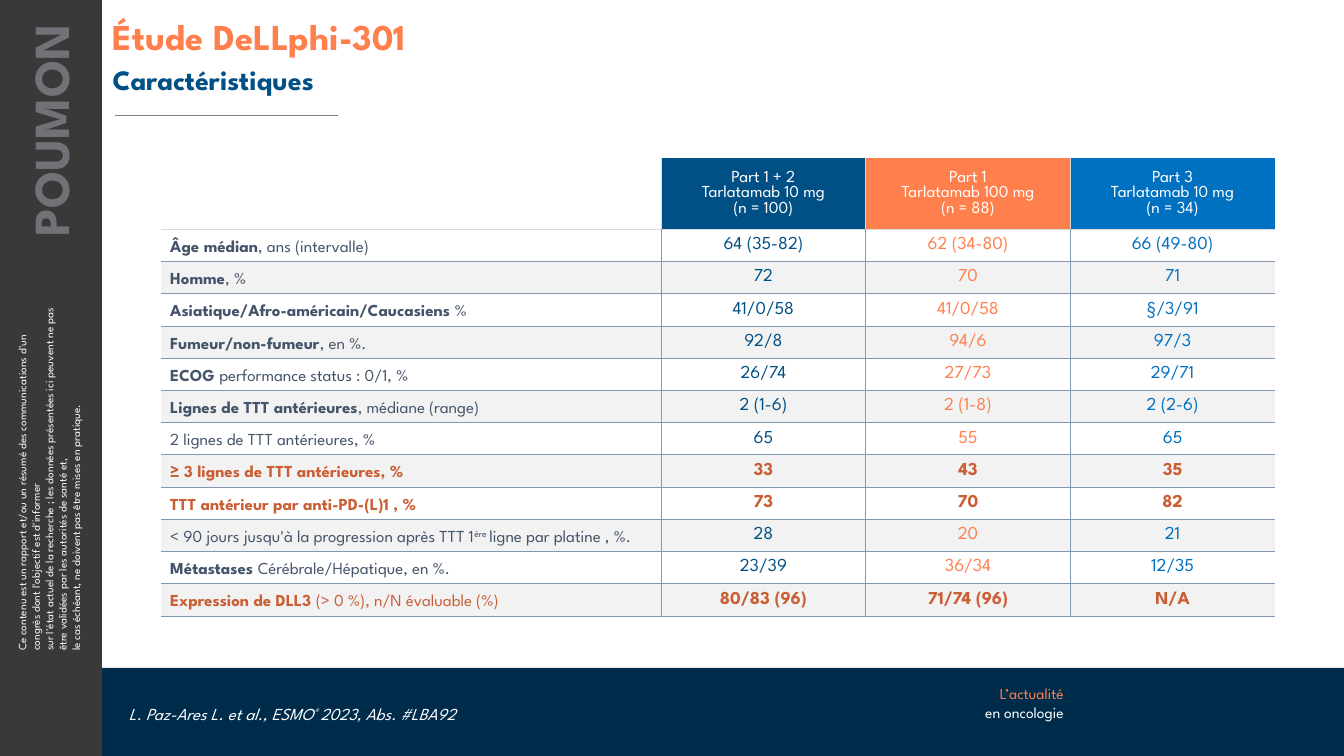
import pptx
import pptx.dml.color
import pptx.enum.shapes
import pptx.enum.text
import pptx.oxml
import pptx.oxml.ns
import pptx.util
from pptx.util import Cm, Pt

FONT = "League Spartan"
NAVY, ORANGE, BLUE = "005086", "FF7F4D", "0070C0"
SLATE, RUST, WHITE = "44546A", "CA5E34", "FFFFFF"
STEEL, PALE = "8497B0", "D9D9D9"
ALIGN = pptx.enum.text.PP_ALIGN
ANCHOR = pptx.enum.text.MSO_ANCHOR
GROUPS = [
    ("Part 1 + 2\nTarlatamab 10 mg\n(n = 100)", NAVY),
    ("Part 1\nTarlatamab 100 mg\n(n = 88)", ORANGE),
    ("Part 3\nTarlatamab 10 mg\n(n = 34)", BLUE),
]
BOLD, SUPER = {"bold": True}, {"raised": True}
ROWS = [
    (False, [("Âge médian", BOLD), (", ans (intervalle)", {})], ["64 (35-82)", "62 (34-80)", "66 (49-80)"]),
    (False, [("Homme", BOLD), (", %", {})], ["72", "70", "71"]),
    (False, [("Asiatique/Afro-américain/Caucasiens", BOLD), (" %", {})], ["41/0/58", "41/0/58", "§/3/91"]),
    (False, [("Fumeur/non-fumeur", BOLD), (", en %.", {})], ["92/8", "94/6", "97/3"]),
    (False, [("ECOG ", BOLD), ("performance status : 0/1, %", {})], ["26/74", "27/73", "29/71"]),
    (False, [("Lignes de TTT antérieures", BOLD), (", médiane (range)", {})], ["2 (1-6)", "2 (1-8)", "2 (2-6)"]),
    (False, [("2 lignes de TTT antérieures, %", {})], ["65", "55", "65"]),
    (True, [("≥ 3 lignes de TTT antérieures, %", BOLD)], ["33", "43", "35"]),
    (True, [("TTT antérieur par anti-PD-(L)1 , %", BOLD)], ["73", "70", "82"]),
    (False, [("< 90 jours jusqu'à la progression après TTT 1", {}), ("ère ", SUPER), ("ligne par platine , %.", {})],
     ["28", "20", "21"]),
    (False, [("Métastases ", BOLD), ("Cérébrale/Hépatique, en %.", {})], ["23/39", "36/34", "12/35"]),
    (True, [("Expression de DLL3 ", BOLD), ("(> 0 %), n/N évaluable (%)", {})], ["80/83 (96)", "71/74 (96)", "N/A"]),
]


def colour(value):
    """Turn a hex string into a colour."""
    return pptx.dml.color.RGBColor.from_string(value)


def paint(part, value):
    """Fill a shape or a cell with one colour."""
    part.fill.solid()
    part.fill.fore_color.rgb = colour(value)


def write(para, spans, size, ink, **common):
    """Add formatted spans to a paragraph, turning newlines into line breaks."""
    for text, extra in spans:
        values = {"name": FONT, "size": Pt(size), "bold": False, **common, **extra}
        raised, tint = values.pop("raised", False), values.pop("ink", ink)
        for index, line in enumerate(text.split("\n")):
            if index:
                para.add_line_break()
            if not line:
                continue
            span = para.add_run()
            span.text = line
            for name, value in values.items():
                setattr(span.font, name, value)
            span.font.color.rgb = colour(tint)
            if raised:
                span.font._element.set("baseline", "30000")


def add_text(page, box, spans, size, ink, align=ALIGN.LEFT, anchor=ANCHOR.TOP, turn=0, right=0.25, **common):
    """Place a wrapped text box."""
    label = page.shapes.add_textbox(*map(Cm, box))
    label.rotation = turn
    frame = label.text_frame
    for name, value in {"word_wrap": True, "vertical_anchor": anchor, "margin_right": Cm(right)}.items():
        setattr(frame, name, value)
    frame.paragraphs[0].alignment = align
    write(frame.paragraphs[0], spans, size, ink, **common)


def add_band(page, box, fill):
    """Draw a plain rectangle."""
    band = page.shapes.add_shape(pptx.enum.shapes.MSO_SHAPE.RECTANGLE, *map(Cm, box))
    band.shadow.inherit = False
    paint(band, fill)
    band.line.fill.background()


def add_footer(page, box):
    """Draw the footer with the reference and the series name."""
    left, top, width, height = box
    add_band(page, box, "002C4C")
    series = [("L’actualité\n", {"ink": ORANGE}), ("en oncologie", {})]
    add_text(page, (left + 20.32, top + 0.29, 4.17, 1.19), series, 11, WHITE, ALIGN.RIGHT)
    reference = [("L. Paz-Ares L. et al., ESMO", {}), ("® ", SUPER), ("2023, Abs. #LBA92", {})]
    add_text(page, (left + 0.43, top + 0.09, 19.1, height - 0.09), reference, 12, WHITE,
             anchor=ANCHOR.MIDDLE, italic=True)


def add_sidebar(page, box):
    """Draw the side band with its two turned texts."""
    left, top, width, height = box
    add_band(page, box, "3A3839")
    notice = (
        "Ce contenu est un rapport et/ou un résumé des communications d'un congrès dont l'objectif est d'informer\n"
        "sur l'état actuel de la recherche ; les données présentées ici peuvent ne pas être validées "
        "par les autorités de santé et,\nle cas échéant, ne doivent pas être mises en pratique."
    )
    add_text(page, (left - 3.33, top + 11.1, 9.14, 1.96), [(notice, {})], 8, WHITE, turn=270)
    add_text(page, (left - 2.64, top + 3, 7.8, 1.8), [("POUMON", {})], 36, "737078",
             ALIGN.RIGHT, turn=270, right=0.61, bold=True)


def add_heading(page, box):
    """Place the title, the subtitle and the rule below them."""
    left, top, width, height = box
    title = page.shapes.title
    place = {"left": left, "top": top, "width": width, "height": 1.02}
    for name, value in place.items():
        setattr(title, name, Cm(value))
    frame = title.text_frame
    setup = {"word_wrap": True, "auto_size": pptx.enum.text.MSO_AUTO_SIZE.NONE, "vertical_anchor": ANCHOR.TOP}
    for name, value in setup.items():
        setattr(frame, name, value)
    para = frame.paragraphs[0]
    para.alignment, para.line_spacing = ALIGN.LEFT, 0.9
    write(para, [("Étude DeLLphi-301", BOLD)], 26, ORANGE)
    add_text(page, (left, top + 1.09, width, 1.27), [("Caractéristiques", BOLD)], 20, NAVY)
    level = Cm(top + height)
    rule = page.shapes.add_connector(pptx.enum.shapes.MSO_CONNECTOR.STRAIGHT,
                                     Cm(left + 0.31), level, Cm(left + 5.94), level)
    rule.line.color.rgb = colour("808080")
    rule.line.width = Pt(0.75)
    rule._element.spPr.append(pptx.oxml.parse_xml(f'<a:effectLst {pptx.oxml.ns.nsdecls("a")}/>'))


def set_borders(cell, sides):
    """Give a cell its edges, from side to colour and width."""
    props = cell._tc.get_or_add_tcPr()
    for index, (side, (ink, width)) in enumerate(sides.items()):
        props.insert(index, pptx.oxml.parse_xml(
            f'<a:ln{side} {pptx.oxml.ns.nsdecls("a")} w="{Pt(width)}">'
            f'<a:solidFill><a:srgbClr val="{ink}"/></a:solidFill></a:ln{side}>'))


def set_cell(cell, spans, size, ink, fill, label=False, **common):
    """Fill one cell with text and colour."""
    paint(cell, fill)
    margins = {"margin_left": 0.23 if label else 0.1, "margin_right": 0.1,
               "margin_top": 0.13, "margin_bottom": 0.13}
    for name, value in margins.items():
        setattr(cell, name, Cm(value))
    cell.vertical_anchor = ANCHOR.MIDDLE
    para = cell.text_frame.paragraphs[0]
    para.alignment = ALIGN.LEFT if label else ALIGN.CENTER
    if label:
        para.line_spacing = Pt(15.4)
    write(para, spans, size, ink, **common)


def add_patients(page, box):
    """Build the table of patient characteristics."""
    left, top, width, height = box
    head, first = 1.44, 12.6
    table_frame = page.shapes.add_table(len(ROWS) + 1, len(GROUPS) + 1, *map(Cm, box))
    table = table_frame.table
    table._tbl.tblPr.find(pptx.oxml.ns.qn("a:tableStyleId")).text = "{2D5ABB26-0587-4C30-8999-92F81FD0307C}"
    table.first_row = table.horz_banding = False
    for index, column in enumerate(table.columns):
        column.width = Cm((width - first) / len(GROUPS) if index else first)
    for index, row in enumerate(table.rows):
        row.height = Cm((height - head) / len(ROWS) if index else head)
    for column, (name, fill) in enumerate(GROUPS, 1):
        set_cell(table.cell(0, column), [(name, {})], 12, WHITE, fill)
    for line, (accent, label, values) in enumerate(ROWS, 1):
        fill = WHITE if line % 2 else "F2F2F2"
        set_cell(table.cell(line, 0), label, 12, RUST if accent else SLATE, fill, label=True)
        for column, (value, group) in enumerate(zip(values, GROUPS), 1):
            set_cell(table.cell(line, column), [(value, {})], 13, RUST if accent else group[1], fill, bold=accent)
    for line in range(len(ROWS) + 1):
        for column in range(len(GROUPS) + 1):
            edge = (STEEL, 0.5) if line else (PALE, 0.75)
            sides = {"L": edge} if column else {}
            if column < len(GROUPS):
                sides["R"] = edge
            if line:
                sides["T"] = (PALE, 0.75) if line == 1 else edge
            set_borders(table.cell(line, column), {**sides, "B": edge})


def main():
    """Build the deck and save it."""
    deck = pptx.Presentation()
    deck.slide_width, deck.slide_height = Cm(33.87), Cm(19.05)
    page = deck.slides.add_slide(deck.slide_layouts[5])
    add_footer(page, (2.57, 16.83, 31.3, 2.22))
    add_sidebar(page, (0, 0, 2.57, 19.05))
    add_heading(page, (2.59, 0.36, 30.96, 2.56))
    add_patients(page, (4.06, 3.99, 28.07, 11.13))
    deck.save("out.pptx")


if __name__ == "__main__":
    main()
